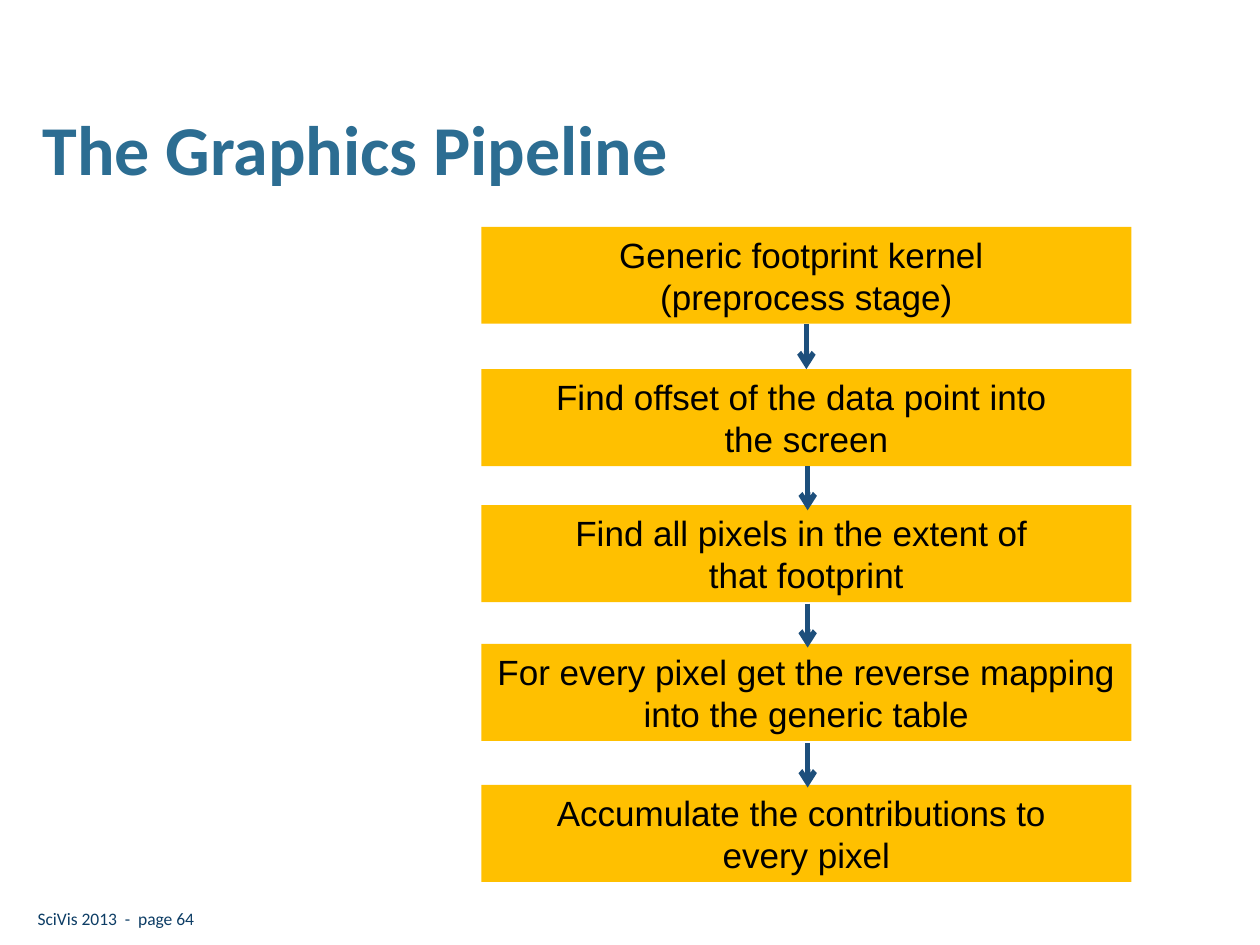
from lxml import etree
from pptx import Presentation
from pptx.dml.color import RGBColor
from pptx.enum.shapes import MSO_CONNECTOR, MSO_SHAPE
from pptx.enum.text import MSO_ANCHOR, PP_ALIGN
from pptx.oxml.ns import qn
from pptx.util import Pt

PX = 9144  # 100 px to the inch
RECT = MSO_SHAPE.RECTANGLE
LINE = MSO_CONNECTOR.STRAIGHT
LEFT, CENTER = PP_ALIGN.LEFT, PP_ALIGN.CENTER
TOP, MIDDLE = MSO_ANCHOR.TOP, MSO_ANCHOR.MIDDLE


def color(code):
    return RGBColor.from_string(code)


def write(shape, text, font="Calibri", size=10, ink="000000", bold=False,
          align=LEFT, anchor=TOP, side=10, space=1.0):
    frame = shape.text_frame
    frame.word_wrap = True
    frame.vertical_anchor = anchor
    frame.margin_left = frame.margin_right = side * PX
    frame.margin_top = frame.margin_bottom = 5 * PX
    para = frame.paragraphs[0]
    para.text = text
    para.alignment = align
    para.line_spacing = space
    for run in para.runs:
        run.font.name = font
        run.font.size = Pt(size)
        run.font.bold = bold
        run.font.color.rgb = color(ink)


deck = Presentation()
deck.slide_width, deck.slide_height = 1000 * PX, 750 * PX
slide = deck.slides.add_slide(deck.slide_layouts[5])
shapes = slide.shapes

# Title
title = shapes.title
title.left, title.top = 34 * PX, 84 * PX
title.width, title.height = 931 * PX, 73 * PX
write(title, "The Graphics Pipeline", size=40, ink="2C6D92", bold=True,
      anchor=MIDDLE, side=0, space=0.95)

# Footer
foot = shapes.add_textbox(20 * PX, 716 * PX, 302 * PX, 27 * PX)
write(foot, "SciVis 2013  -  page 64", ink="0D3D65")

# Pipeline stages: top and text
stages = [
    (180, "Generic footprint kernel \n(preprocess stage)"),
    (293, "Find offset of the data point into \nthe screen"),
    (401, "Find all pixels in the extent of \nthat footprint"),
    (511, "For every pixel get the reverse mapping into the generic table"),
    (623, "Accumulate the contributions to \nevery pixel"),
]
for top, text in stages:
    box = shapes.add_shape(RECT, 382 * PX, top * PX, 516 * PX, 77 * PX)
    box.shadow.inherit = False
    box.fill.solid()
    box.fill.fore_color.rgb = color("FFC000")
    box.line.fill.background()
    write(box, text, font="Arial", size=20, align=CENTER, anchor=MIDDLE)

# Arrows between stages: x, start and end
for x, start, end in [(640, 257, 293), (641, 370, 405),
                      (641, 479, 514), (641, 590, 625)]:
    arrow = shapes.add_connector(LINE, x * PX, start * PX, x * PX, end * PX)
    arrow.line.color.rgb = color("1D4F7C")
    arrow.line.width = Pt(3)
    etree.SubElement(arrow.line._get_or_add_ln(), qn("a:tailEnd"), type="arrow")
    etree.SubElement(arrow._element.spPr, qn("a:effectLst"))

deck.save("out.pptx")
